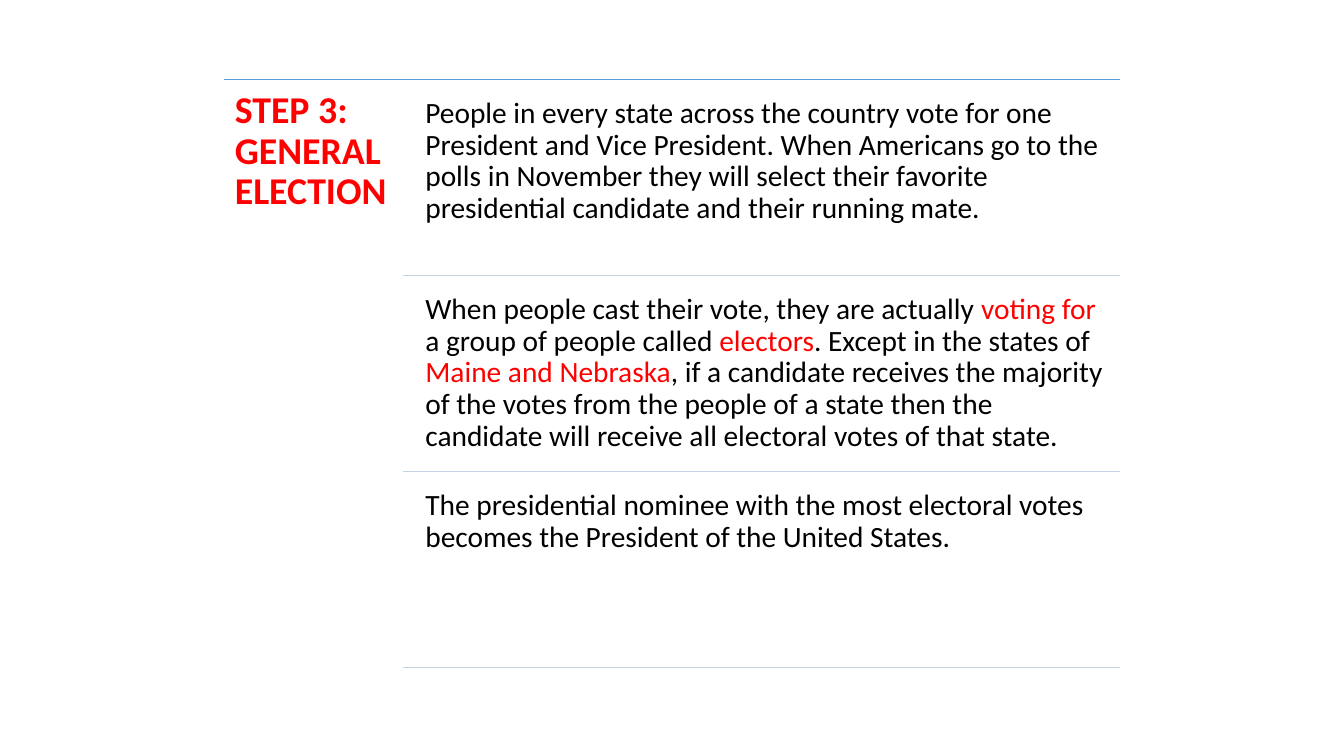
import pptx
import pptx.dml.color
import pptx.enum.shapes
import pptx.enum.text
import pptx.oxml
import pptx.util
from pptx.util import Cm

COLORS = {"accent": "FF0000", "body": "000000", "top_rule": "5B9BD5", "step_rule": "C4D5EB"}
FONT = "Calibri"

# Layout
LEFT, RIGHT, TOP = 5.64, 28.22, 2.0
RULE_LEFT, BODY_LEFT = 10.16, 10.49
ROW_PITCH, ROW_GAP, ROW_HEIGHT = 4.94, 0.24, 4.7

TITLE = [("STEP 3: GENERAL ELECTION", "accent")]
STEPS = [
    [("People in every state across the country vote for one President and Vice President. "
      "When Americans go to the polls in November they will select their favorite "
      "presidential candidate and their running mate.", "body")],
    [("When people cast their vote, they are actually", "body"),
     (" voting for ", "accent"),
     ("a group of people called", "body"),
     (" electors", "accent"),
     (". Except in the states of ", "body"),
     ("Maine and Nebraska", "accent"),
     (", if a candidate receives the majority of the votes from the people of a state "
      "then the candidate will receive all electoral votes of that state.", "body")],
    [("The presidential nominee with the most electoral votes becomes the President "
      "of the United States.", "body")],
]


def rgb(name):
    return pptx.dml.color.RGBColor.from_string(COLORS[name])


def add_rule(page, left, top, color):
    """Draw a thin horizontal rule that ends at the right margin."""
    rule = page.shapes.add_connector(
        pptx.enum.shapes.MSO_CONNECTOR.STRAIGHT, Cm(left), Cm(top), Cm(RIGHT), Cm(top))
    rule.line.color.rgb = rgb(color)
    rule.line.width = pptx.util.Pt(1)
    rule._element.spPr.append(pptx.oxml.parse_xml(
        '<a:effectLst xmlns:a="http://schemas.openxmlformats.org/drawingml/2006/main"/>'))


def add_text(page, left, top, width, height, spans, size, inset, bold=False):
    """Add one wrapped paragraph made of coloured spans."""
    box = page.shapes.add_textbox(Cm(left), Cm(top), Cm(width), Cm(height))
    frame = box.text_frame
    frame.word_wrap = True
    frame.vertical_anchor = pptx.enum.text.MSO_ANCHOR.TOP
    frame.margin_left = frame.margin_right = Cm(inset)
    frame.margin_top = frame.margin_bottom = Cm(inset)
    para = frame.paragraphs[0]
    para.line_spacing = 0.9
    for text, color in spans:
        span = para.add_run()
        span.text = text
        span.font.name = FONT
        span.font.size = pptx.util.Pt(size)
        span.font.bold = bold
        span.font.color.rgb = rgb(color)


def main():
    deck = pptx.Presentation()
    deck.slide_width, deck.slide_height = Cm(33.87), Cm(19.05)
    page = deck.slides.add_slide(deck.slide_layouts[6])

    # Heading column
    add_rule(page, LEFT, TOP, "top_rule")
    add_text(page, LEFT, TOP, RULE_LEFT - LEFT, 3 * ROW_PITCH + ROW_GAP, TITLE,
             size=27, inset=0.28, bold=True)

    # Explanations, each closed by a rule
    for index, spans in enumerate(STEPS):
        row_top = TOP + index * ROW_PITCH
        add_text(page, BODY_LEFT, row_top + ROW_GAP, RIGHT - BODY_LEFT, ROW_HEIGHT, spans,
                 size=21, inset=0.23)
        add_rule(page, RULE_LEFT, row_top + ROW_PITCH, "step_rule")

    deck.save("out.pptx")


if __name__ == "__main__":
    main()
